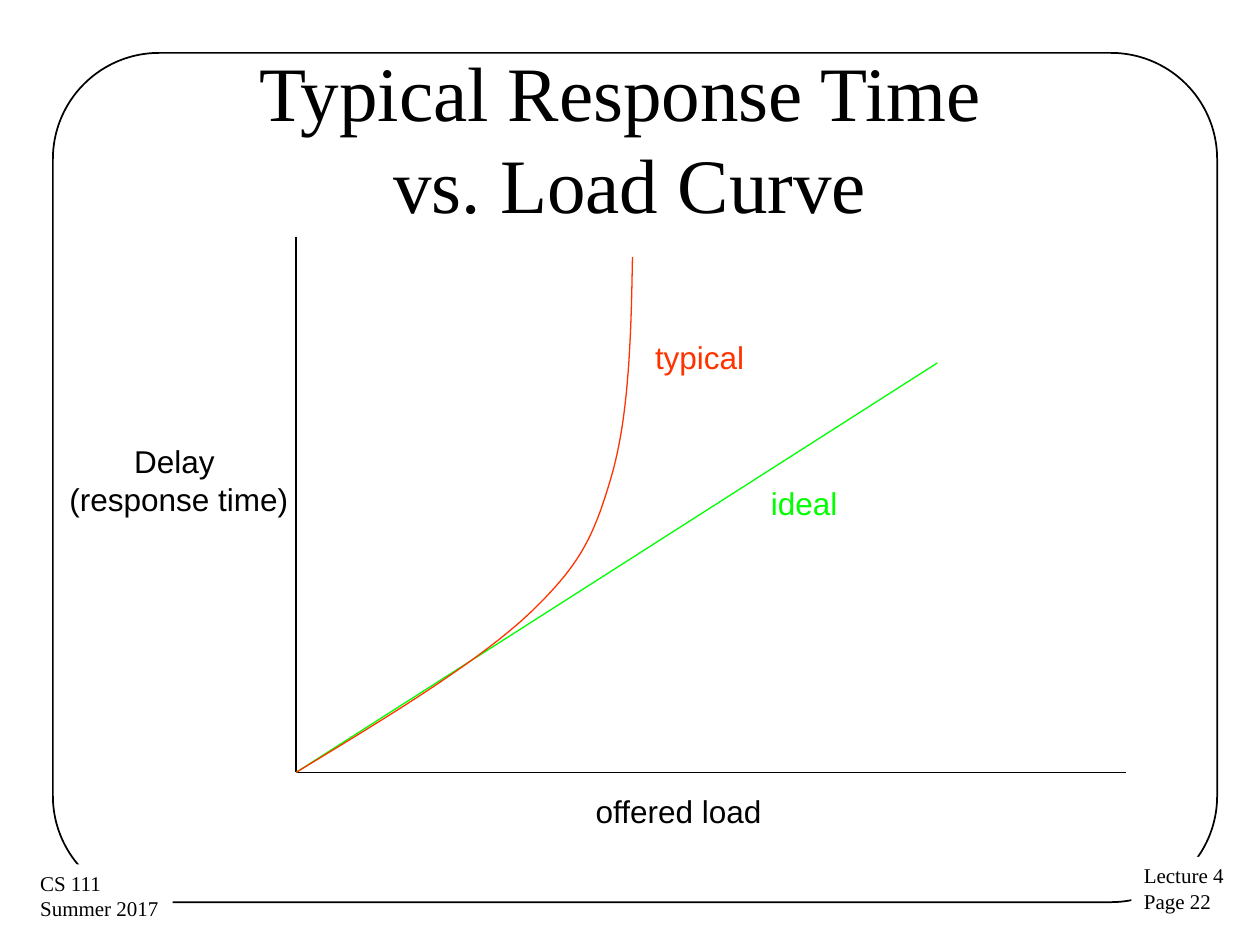
from lxml.etree import SubElement
from pptx import Presentation
from pptx.dml.color import RGBColor
from pptx.enum.shapes import MSO_CONNECTOR as Connector, MSO_SHAPE as Shape
from pptx.enum.text import MSO_ANCHOR as Anchor, MSO_AUTO_SIZE as AutoSize, PP_ALIGN as Align
from pptx.oxml.ns import qn
from pptx.util import Inches, Pt

WIDTH, HEIGHT = 10, 7.5
BLACK, WHITE, GREEN, RED = "000000", "FFFFFF", "00FF00", "FF3300"
SERIF, SANS = "Times New Roman", "Arial"


def color(hex_value):
    return RGBColor.from_string(hex_value)


def inches(box):
    return [Inches(value) for value in box]


def write(shape, text, font=SANS, size=18, hex_value=BLACK, align=Align.LEFT,
          anchor=Anchor.TOP, wrap=False, fit=AutoSize.SHAPE_TO_FIT_TEXT):
    frame = shape.text_frame
    frame.text = text
    frame.word_wrap = wrap
    frame.auto_size = fit
    frame.vertical_anchor = anchor
    for paragraph in frame.paragraphs:
        paragraph.alignment = align
        for run in paragraph.runs:
            run.font.name = font
            run.font.size = Pt(size)
            run.font.color.rgb = color(hex_value)


def add_label(slide, box, text, **style):
    write(slide.shapes.add_textbox(*inches(box)), text, **style)


def add_line(slide, start, end, hex_value=BLACK):
    line = slide.shapes.add_connector(Connector.STRAIGHT, *inches(start + end))
    line.line.color.rgb = color(hex_value)
    line.line.width = Pt(0.75)
    SubElement(line._element.spPr, qn("a:effectLst"))


def add_frame(slide, box):
    frame = slide.shapes.add_shape(Shape.ROUNDED_RECTANGLE, *inches(box))
    frame.adjustments[0] = 0.125
    frame.shadow.inherit = False
    frame.fill.background()
    frame.line.color.rgb = color(BLACK)
    frame.line.width = Pt(1)


def add_corner_note(slide, box, text):
    note = slide.shapes.add_shape(Shape.RECTANGLE, *inches(box))
    note.shadow.inherit = False
    note.fill.solid()
    note.fill.fore_color.rgb = color(WHITE)
    note.line.fill.background()
    write(note, text, font=SERIF, size=12)


def add_title(slide, box, text):
    title = slide.shapes.title
    title.left, title.top, title.width, title.height = inches(box)
    write(title, text, font=SERIF, size=44, align=Align.CENTER,
          anchor=Anchor.MIDDLE, wrap=True, fit=AutoSize.NONE)


def bezier(p0, p1, p2, p3, steps=24):
    """Points along a cubic curve, without its first point."""
    for step in range(1, steps + 1):
        t = step / steps
        u = 1 - t
        yield tuple(u**3 * a + 3 * u * u * t * b + 3 * u * t * t * c + t**3 * d
                    for a, b, c, d in zip(p0, p1, p2, p3))


def add_curve(slide, knots, hex_value):
    # The builder rounds to whole units, so its points are given in EMU
    points = [inches(point) for i in range(0, len(knots) - 1, 3)
              for point in bezier(*knots[i:i + 4])]
    builder = slide.shapes.build_freeform(*inches(knots[0]))
    builder.add_line_segments(points, close=False)
    curve = builder.convert_to_shape()
    curve.shadow.inherit = False
    curve.fill.background()
    curve.line.color.rgb = color(hex_value)
    curve.line.width = Pt(0.75)


def add_load_plot(slide, box):
    left, top, width, height = box
    bottom = top + height

    def at(x, y):
        """Slide position of a point measured right of and above the origin."""
        return left + x, bottom - y

    origin = at(0, 0)

    # Axes
    add_line(slide, at(0, height), origin)
    add_line(slide, origin, at(width, 0))
    add_label(slide, (*at(-1.91, 2.67), 1.96, 0.71), "Delay \n(response time)",
              align=Align.CENTER)
    add_label(slide, (*at(2.28, -0.11), 1.67, 0.43), "offered load")

    # Ideal response
    add_line(slide, origin, at(5.09, 3.25), GREEN)
    add_label(slide, (*at(3.67, 2.34), 0.79, 0.43), "ideal", hex_value=GREEN)

    # Typical response: knots and handles of three joined cubic curves
    knots = [(0, 0), (0.71, 0.43), (1.42, 0.86), (1.84, 1.25),
             (2.25, 1.64), (2.36, 1.86), (2.5, 2.34),
             (2.64, 2.81), (2.66, 3.45), (2.67, 4.09)]
    add_curve(slide, [at(*knot) for knot in knots], RED)
    add_label(slide, (*at(2.75, 3.5), 0.99, 0.43), "typical", hex_value=RED)


def main():
    deck = Presentation()
    deck.slide_width, deck.slide_height = Inches(WIDTH), Inches(HEIGHT)
    slide = deck.slides.add_slide(deck.slide_layouts[5])

    # Border and corner notes
    add_frame(slide, (0.42, 0.42, 9.24, 6.74))
    add_corner_note(slide, (8.98, 6.8, 0.85, 0.51), "Lecture 4\nPage 22")
    add_corner_note(slide, (0.22, 6.86, 1.15, 0.51), "CS 111\nSummer 2017")

    # Title and plot
    add_title(slide, (0.5, 0.46, 9, 1.25), "Typical Response Time \vvs. Load Curve")
    add_load_plot(slide, (2.35, 1.88, 6.59, 4.25))

    deck.save("out.pptx")


if __name__ == "__main__":
    main()
